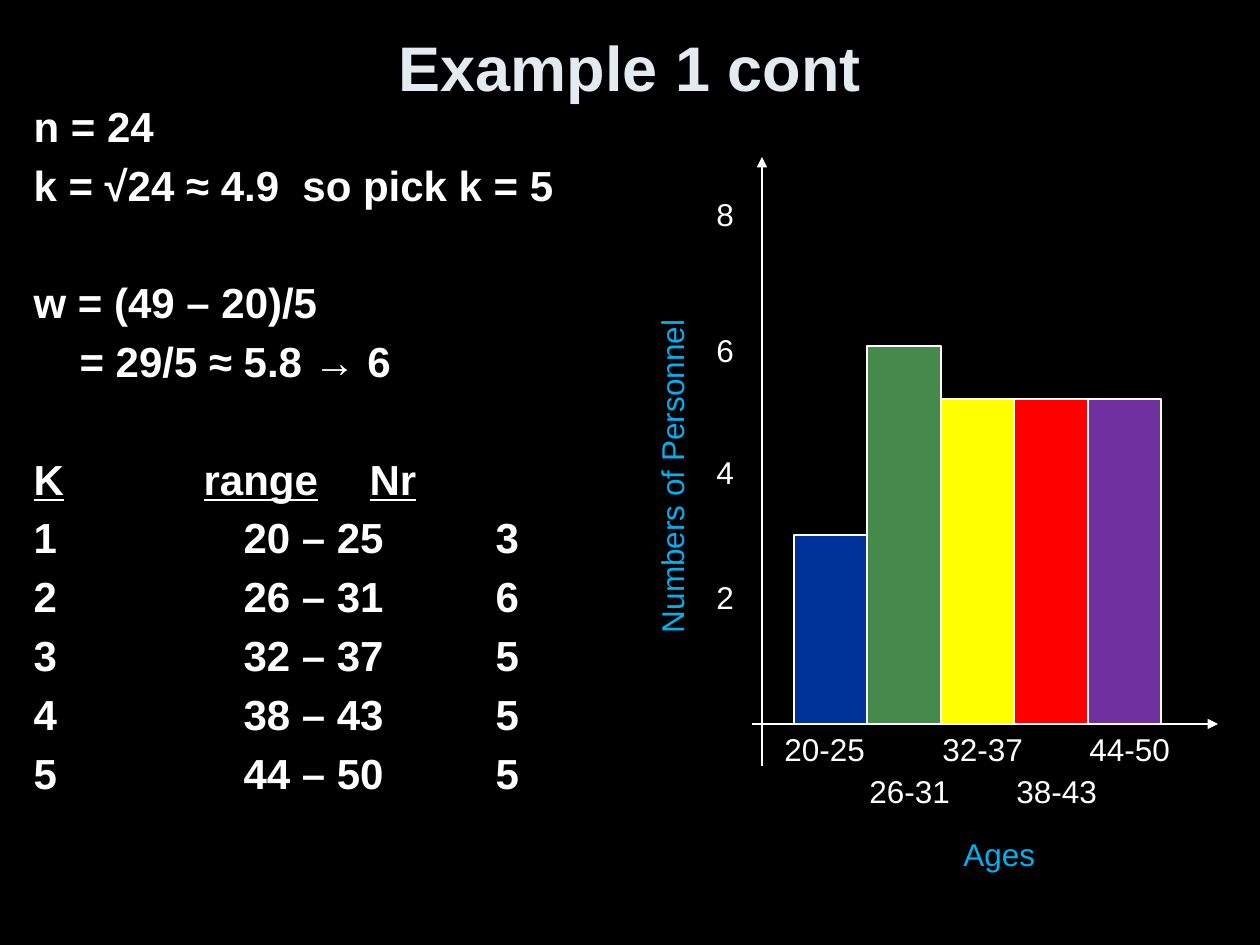
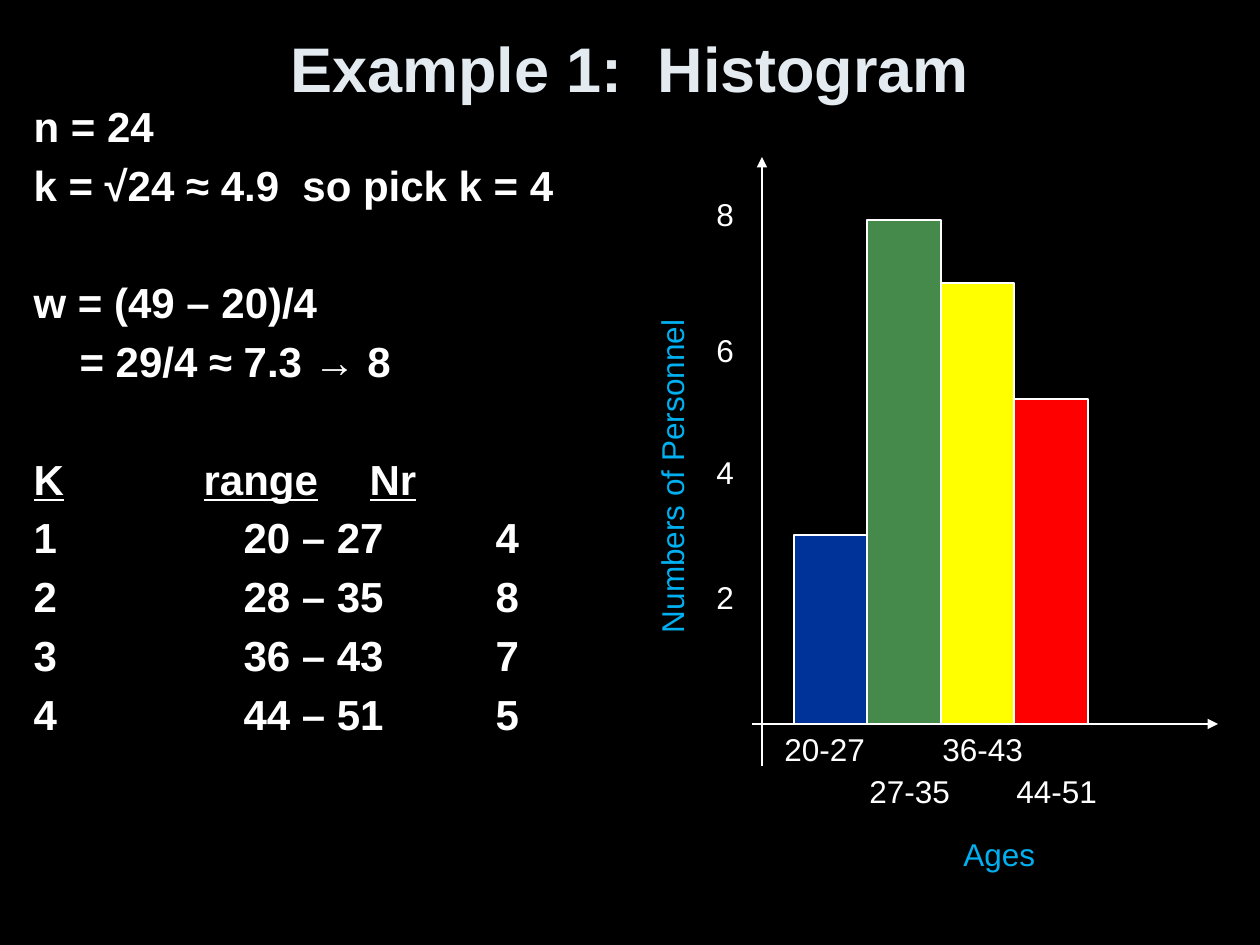
from lxml.etree import SubElement
from pptx import Presentation
from pptx.dml.color import RGBColor
from pptx.enum.shapes import MSO_CONNECTOR, MSO_SHAPE
from pptx.enum.text import MSO_ANCHOR, MSO_AUTO_SIZE, PP_ALIGN
from pptx.oxml.ns import qn
from pptx.util import Emu, Pt

FONT = "Arial"
BLACK = RGBColor(0x00, 0x00, 0x00)
WHITE = RGBColor(0xFF, 0xFF, 0xFF)
TITLE_COLOR = RGBColor(0xE3, 0xEB, 0xF1)
AXIS_TITLE = RGBColor(0x00, 0xB0, 0xF0)
BAR_COLORS = [
    RGBColor(0x00, 0x33, 0x99),
    RGBColor(0x46, 0x8A, 0x4B),
    RGBColor(0xFF, 0xFF, 0x00),
    RGBColor(0xFF, 0x00, 0x00),
    RGBColor(0x70, 0x30, 0xA0),
]

# Boxes in px: left, top, width, height
WORK_BOX = (21, 94, 577, 819)
CHART_BOX = (693, 157, 525, 722)

# Columns in px: hanging indent of the second, step from there to the third
HEADER_COLUMNS = dict(hanging=170, tab_step=166)
ROW_COLUMNS = dict(hanging=210, tab_step=252)

# Space before a line, and before a line that starts a new block, in points
LINE_GAP, BLOCK_GAP = 4.8, 38.4

# Histogram offsets in px inside its box
AXIS_X, AXIS_Y = 69, 567
VALUE_TOPS = {2: 415, 4: 290, 6: 168, 8: 32}
CATEGORY_LEFTS = (79, 164, 237, 311, 384)
LABEL_H = 50


def px(n):
    return Emu(n * 914400 // 126)


def place(shape, left, top, width, height):
    shape.left, shape.top = px(left), px(top)
    shape.width, shape.height = px(width), px(height)


def add_text(p, text, size=18, color=WHITE, bold=False, underline=False):
    r = p.add_run()
    r.text = text
    f = r.font
    f.name, f.size, f.bold, f.underline = FONT, Pt(size), bold, underline
    f.color.rgb = color


def add_title(s, text, top):
    title = s.shapes.title
    place(title, 63, top, 1134, 105)
    tf = title.text_frame
    tf.auto_size = MSO_AUTO_SIZE.NONE
    tf.vertical_anchor = MSO_ANCHOR.MIDDLE
    p = tf.paragraphs[0]
    p.alignment = PP_ALIGN.CENTER
    add_text(p, text, size=36, color=TITLE_COLOR, bold=True)


def format_line(p, indent=0, hanging=0, tab_step=126, before=LINE_GAP):
    """Remove the bullet, set the indents, tab step and space before."""
    pPr = p._p.get_or_add_pPr()
    pPr.set("marL", str(px(indent + hanging)))
    pPr.set("indent", str(px(-hanging)))
    pPr.set("defTabSz", str(px(tab_step)))
    SubElement(pPr, qn("a:buNone"))
    p.space_before = Pt(before)


def add_work(s, box, calculation, classes):
    """Class-width calculation followed by the frequency rows."""
    body = s.placeholders[1]
    place(body, *box)
    tf = body.text_frame
    tf.auto_size = MSO_AUTO_SIZE.NONE
    bold = dict(size=24, bold=True)

    # Calculation: a gap of one line goes before the width formula
    layout = [dict(before=0), {}, dict(before=BLOCK_GAP), dict(indent=46)]
    for i, (text, options) in enumerate(zip(calculation, layout)):
        p = tf.add_paragraph() if i else tf.paragraphs[0]
        format_line(p, **options)
        add_text(p, text, **bold)

    # Underlined column heads
    p = tf.add_paragraph()
    format_line(p, before=BLOCK_GAP, **HEADER_COLUMNS)
    for i, head in enumerate(("K", "range", "Nr")):
        if i:
            add_text(p, "\t", **bold)
        add_text(p, head, underline=True, **bold)

    # Frequency rows
    for k, (ages, count) in enumerate(classes, 1):
        p = tf.add_paragraph()
        format_line(p, **ROW_COLUMNS)
        add_text(p, f"{k}\t{ages}\t{count}", **bold)


def add_label(s, text, left, top, width, color=WHITE, rotation=0):
    tb = s.shapes.add_textbox(px(left), px(top), px(width), px(LABEL_H))
    tb.rotation = rotation
    tf = tb.text_frame
    tf.word_wrap = False
    tf.auto_size = MSO_AUTO_SIZE.SHAPE_TO_FIT_TEXT
    add_text(tf.paragraphs[0], text, color=color)


def add_axis(s, x1, y1, x2, y2):
    c = s.shapes.add_connector(MSO_CONNECTOR.STRAIGHT, px(x1), px(y1), px(x2), px(y2))
    c.line.color.rgb = WHITE
    c.line.width = Pt(0.75)
    SubElement(c.line._get_or_add_ln(), qn("a:tailEnd"), type="triangle")
    SubElement(c._element.spPr, qn("a:effectLst"))


def add_histogram(s, box, bars):
    """Bars are (ages, height in px) pairs standing on the horizontal axis."""
    x, y, width, height = box
    base = y + AXIS_Y

    # Bars touch each other at a pitch of 73.5 px
    edges = [x + 101 + i * 147 // 2 for i in range(len(bars) + 1)]
    for i, (ages, bar_h) in enumerate(bars):
        bar = s.shapes.add_shape(
            MSO_SHAPE.RECTANGLE, px(edges[i]), px(base - bar_h),
            px(edges[i + 1] - edges[i]), px(bar_h))
        bar.shadow.inherit = False
        bar.fill.solid()
        bar.fill.fore_color.rgb = BAR_COLORS[i]
        bar.line.color.rgb = WHITE
        bar.line.width = Pt(0.75)

    # Axes
    add_axis(s, x + AXIS_X, base + 42, x + AXIS_X, y)
    add_axis(s, x + AXIS_X - 10, base, x + width, base)

    # Value labels, then category labels staggered over two rows
    for value, top in VALUE_TOPS.items():
        add_label(s, str(value), x + 11, y + top, 43)
    for i, (ages, _) in enumerate(bars):
        add_label(s, ages, x + CATEGORY_LEFTS[i], base + 42 * (i % 2), 106)

    # Axis titles
    add_label(s, "Numbers of Personnel", x - 192, y + 293, 341, AXIS_TITLE, rotation=270)
    add_label(s, "Ages", x + 258, y + height - LABEL_H, 98, AXIS_TITLE)


def add_example(prs, title, title_top, calculation, classes, bars):
    s = prs.slides.add_slide(prs.slide_layouts[1])
    add_title(s, title, title_top)
    add_work(s, WORK_BOX, calculation, classes)
    add_histogram(s, CHART_BOX, bars)


def main():
    prs = Presentation()
    prs.slide_width, prs.slide_height = px(1260), px(945)
    fill = prs.slide_master.background.fill
    fill.solid()
    fill.fore_color.rgb = BLACK

    # Five classes
    add_example(
        prs, "Example 1 cont", 14,
        ["n = 24", "k = √24 ≈ 4.9  so pick k = 5",
         "w = (49 – 20)/5", "= 29/5 ≈ 5.8 → 6"],
        [("20 – 25", 3), ("26 – 31", 6), ("32 – 37", 5),
         ("38 – 43", 5), ("44 – 50", 5)],
        [("20-25", 189), ("26-31", 378), ("32-37", 325),
         ("38-43", 325), ("44-50", 325)])

    # Four classes
    add_example(
        prs, "Example 1:  Histogram", 15,
        ["n = 24", "k = √24 ≈ 4.9  so pick k = 4",
         "w = (49 – 20)/4", "= 29/4 ≈ 7.3 → 8"],
        [("20 – 27", 4), ("28 – 35", 8), ("36 – 43", 7), ("44 – 51", 5)],
        [("20-27", 189), ("27-35", 504), ("36-43", 441), ("44-51", 325)])

    prs.save("out.pptx")


if __name__ == "__main__":
    main()
